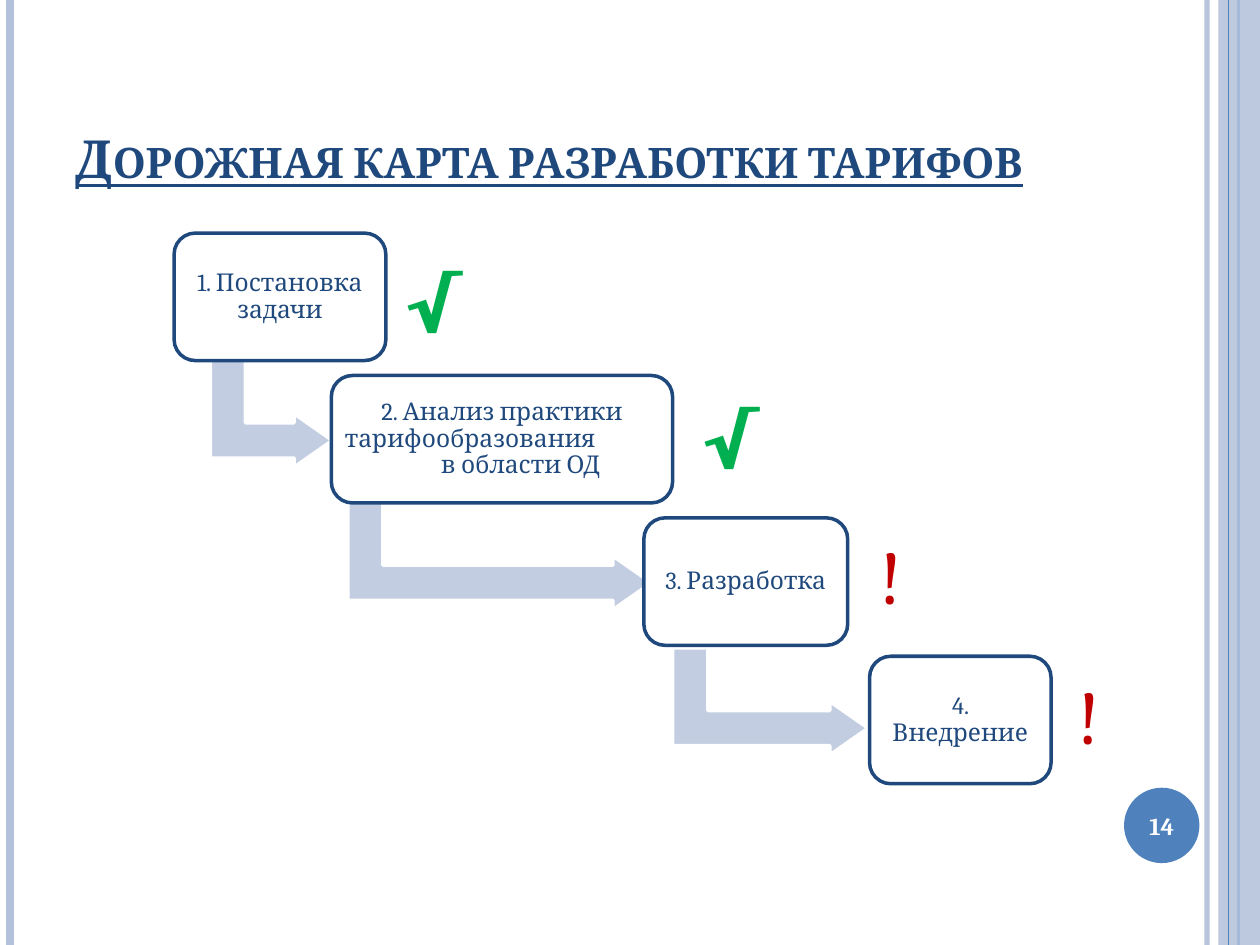
from lxml.etree import SubElement
from pptx import Presentation
from pptx.dml.color import RGBColor
from pptx.enum.shapes import MSO_CONNECTOR, MSO_SHAPE
from pptx.enum.text import MSO_ANCHOR, PP_ALIGN
from pptx.oxml.ns import qn
from pptx.util import Cm, Pt

NAVY = RGBColor(0x1F, 0x49, 0x7D)
BLUE = RGBColor(0x4F, 0x81, 0xBD)
PALE = RGBColor(0xB3, 0xC1, 0xDB)
ARROW = RGBColor(0xC2, 0xCD, 0xE1)
WHITE = RGBColor(0xFF, 0xFF, 0xFF)
GREEN = RGBColor(0x00, 0xB0, 0x50)
RED = RGBColor(0xC0, 0x00, 0x00)
FONT = "Cambria"
HEIGHT = 19.05
BOX_HEIGHT = 2.57
ARROW_DEPTH = 2.16

# Stripes: x, colour, width in points, opacity in percent
STRIPES = [(24.33, PALE, 3, 93), (0.2, PALE, 4.5, 100),
           (24.97, BLUE, 1.5, 100)]
# Steps: left, top, width, lines of text
STEPS = [
    (3.51, 4.7, 4.27, ["1. Постановка задачи"]),
    (6.68, 7.57, 6.88, ["2. Анализ практики", "тарифообразования", "в области ОД"]),
    (12.98, 10.44, 4.11, ["3. Разработка"]),
    (17.53, 13.23, 3.66, ["4. Внедрение"]),
]
# Arrows before rotation: left, top, length
ARROWS = [(4.39, 7.11, 2.46), (8.99, 8.15, 6.12), (14.45, 12.17, 3.94)]
# Status marks: left, top, width, sign, colour, bold
MARKS = [
    (7.9, 4.98, 1.37, "√", GREEN, True),
    (13.89, 7.72, 1.37, "√", GREEN, True),
    (17.5, 10.52, 0.94, "!", RED, False),
    (21.49, 13.34, 0.94, "!", RED, False),
]


def set_opacity(element, percent):
    color = element.find(".//" + qn("a:srgbClr"))
    SubElement(color, qn("a:alpha"), val=str(percent * 1000))


def format_runs(p, size, color, bold=False):
    for r in p.runs:
        r.font.name = FONT
        r.font.size = Pt(size)
        r.font.bold = bold
        r.font.color.rgb = color


def add_stripe(slide, x, color, width, opacity=100):
    line = slide.shapes.add_connector(
        MSO_CONNECTOR.STRAIGHT, Cm(x), 0, Cm(x), Cm(HEIGHT))
    line.line.color.rgb = color
    line.line.width = Pt(width)
    if opacity < 100:
        set_opacity(line.line._ln, opacity)
    SubElement(line._element.spPr, qn("a:effectLst"))


def add_shape(slide, kind, left, top, width, height, fill, line=None):
    sp = slide.shapes.add_shape(kind, Cm(left), Cm(top), Cm(width), Cm(height))
    sp.shadow.inherit = False
    sp.fill.solid()
    sp.fill.fore_color.rgb = fill
    if line is None:
        sp.line.fill.background()
    else:
        sp.line.color.rgb = line
        sp.line.width = Pt(2)
    return sp


def set_insets(tf, inset):
    tf.margin_left = tf.margin_right = Cm(inset)
    tf.margin_top = tf.margin_bottom = Cm(inset)


def add_title(slide, text):
    title = slide.shapes.title
    title.left, title.top, title.width, title.height = (
        Cm(1.27), Cm(0.76), Cm(20.75), Cm(3.18))
    tf = title.text_frame
    tf.text = text
    tf.vertical_anchor = MSO_ANCHOR.BOTTOM
    p = tf.paragraphs[0]
    p.alignment = PP_ALIGN.LEFT
    format_runs(p, 30, NAVY, True)
    p.runs[0].font.underline = True
    p.runs[0].font._element.set("cap", "small")


def add_step(slide, left, top, width, lines):
    sp = add_shape(slide, MSO_SHAPE.ROUNDED_RECTANGLE,
                   left, top, width, BOX_HEIGHT, WHITE, NAVY)
    tf = sp.text_frame
    set_insets(tf, 0.15)
    tf.word_wrap = True
    tf.vertical_anchor = MSO_ANCHOR.MIDDLE
    tf.text = "\n".join(lines)
    for p in tf.paragraphs:
        p.alignment = PP_ALIGN.CENTER
        p.line_spacing = 0.9
        format_runs(p, 14, NAVY)
    return tf


def add_arrow(slide, left, top, length):
    sp = add_shape(slide, MSO_SHAPE.BENT_UP_ARROW,
                   left, top, ARROW_DEPTH, length, ARROW, WHITE)
    sp.rotation = 90
    for i, value in enumerate((0.328, 0.25, 0.358)):
        sp.adjustments[i] = value


def add_mark(slide, left, top, width, sign, color, bold):
    tf = slide.shapes.add_textbox(
        Cm(left), Cm(top), Cm(width), Cm(2.13)).text_frame
    tf.word_wrap = False
    tf.text = sign
    format_runs(tf.paragraphs[0], 44, color, bold)


def add_page_number(slide, number):
    sp = add_shape(slide, MSO_SHAPE.OVAL, 22.66, 15.88, 1.52, 1.52, BLUE)
    tf = sp.text_frame
    set_insets(tf, 0)
    tf.vertical_anchor = MSO_ANCHOR.MIDDLE
    tf.text = number
    tf.paragraphs[0].alignment = PP_ALIGN.CENTER
    format_runs(tf.paragraphs[0], 14, WHITE, True)


def main():
    prs = Presentation()
    prs.slide_width, prs.slide_height = Cm(25.4), Cm(HEIGHT)
    slide = prs.slides.add_slide(prs.slide_layouts[5])

    # Side decoration
    for stripe in STRIPES:
        add_stripe(slide, *stripe)
    band = add_shape(slide, MSO_SHAPE.RECTANGLE, 24.56, 0, 0.84, HEIGHT, PALE)
    set_opacity(band._element.spPr, 87)
    add_stripe(slide, 24.77, BLUE, 0.75)

    add_title(slide, "Дорожная карта разработки тарифов")
    add_page_number(slide, "14")

    # Staircase of steps
    for arrow in ARROWS:
        add_arrow(slide, *arrow)
    frames = [add_step(slide, *step) for step in STEPS]

    # Staggered lines of the second step
    middle, last = frames[1].paragraphs[1:]
    middle.alignment = PP_ALIGN.LEFT
    last._p.get_or_add_pPr().set("marL", str(Cm(0.76)))

    # Status of each step
    for mark in MARKS:
        add_mark(slide, *mark)

    prs.save("out.pptx")


if __name__ == "__main__":
    main()
